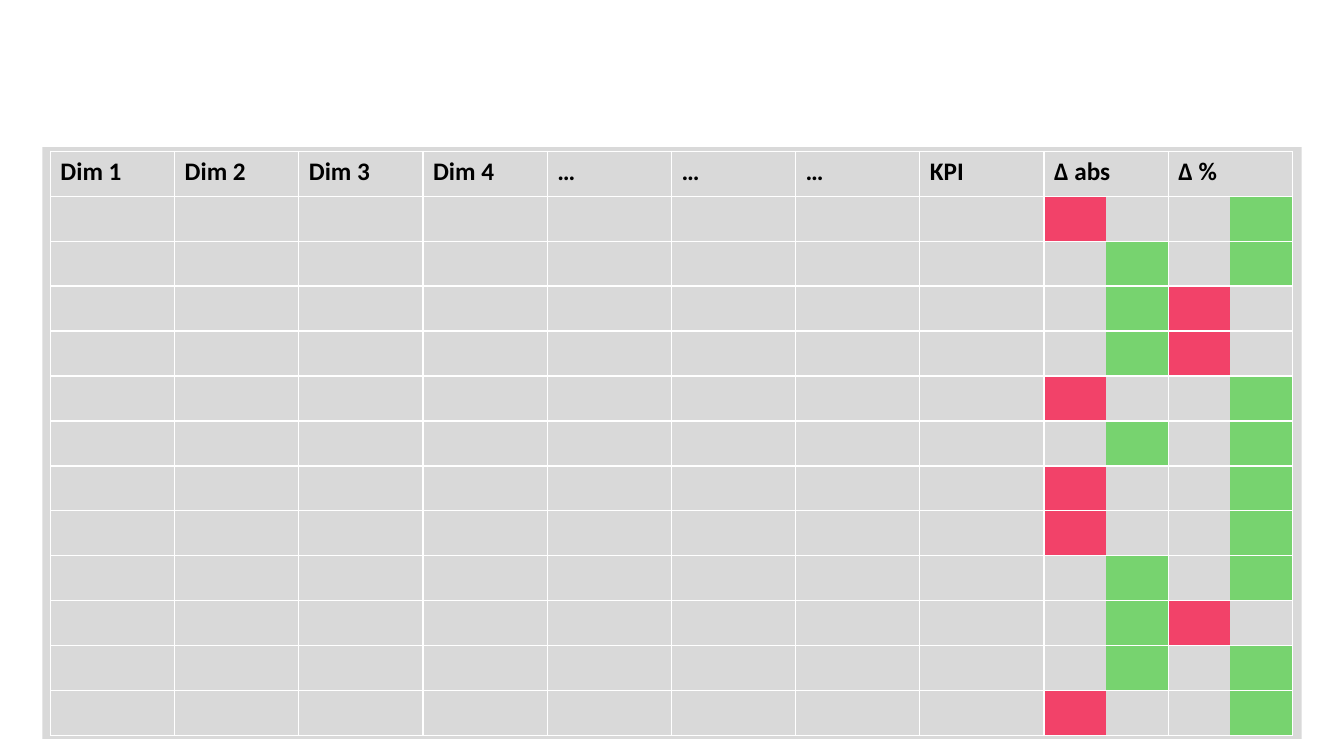
from lxml import etree
from pptx import Presentation
from pptx.dml.color import RGBColor
from pptx.enum.shapes import MSO_SHAPE
from pptx.oxml.ns import qn
from pptx.util import Inches, Pt

RECT = MSO_SHAPE.RECTANGLE
BLANK_LAYOUT = 6
FONT = "Calibri"
GREY, RED, GREEN = "D9D9D9", "F24269", "77D36F"
WHITE, BLACK = "FFFFFF", "000000"

HEADERS = ["Dim 1", "Dim 2", "Dim 3", "Dim 4", "…", "…", "…", "KPI", "Δ abs", "Δ %"]
DELTA_SIGNS = ["-+", "++", "+-", "+-", "-+", "++", "-+", "-+", "++", "+-", "++", "-+"]
SIGN_HALVES = {"-": (RED, GREY), "+": (GREY, GREEN)}


def color(value):
    return RGBColor.from_string(value)


def add_text(tf, text, size=18, bold=False, fill=BLACK):
    r = tf.paragraphs[0].add_run()
    r.text = text
    r.font.name = FONT
    r.font.size = Pt(size)
    r.font.bold = bold
    r.font.color.rgb = color(fill)


def set_borders(cell, line_color=WHITE, width=1):
    tc_pr = cell._tc.get_or_add_tcPr()
    for side in ("lnL", "lnR", "lnT", "lnB"):
        ln = etree.SubElement(tc_pr, qn(f"a:{side}"), w=str(Pt(width)))
        solid = etree.SubElement(ln, qn("a:solidFill"))
        etree.SubElement(solid, qn("a:srgbClr"), val=line_color)


def fill_halves(cell, halves):
    cell.fill.gradient()
    cell.fill.gradient_angle = 0
    for stop, half in zip(cell.fill.gradient_stops, halves):
        stop.position = 0.5
        stop.color.rgb = color(half)


def add_panel(s, box):
    sp = s.shapes.add_shape(RECT, *map(Inches, box))
    sp.shadow.inherit = False
    sp.fill.solid()
    sp.fill.fore_color.rgb = color(GREY)
    sp.line.fill.background()


def add_kpi_table(s, box):
    rows, cols = len(DELTA_SIGNS) + 1, len(HEADERS)
    left, top, width, height = map(Inches, box)
    table = s.shapes.add_table(rows, cols, left, top, width, height).table
    table.first_row = False
    table.horz_banding = False
    for col in table.columns:
        col.width = width // cols
    for row in table.rows:
        row.height = height // rows
    for cell in table.iter_cells():
        set_borders(cell)
        cell.fill.background()
    for i, header in enumerate(HEADERS):
        add_text(table.cell(0, i).text_frame, header, bold=True)
    for i, signs in enumerate(DELTA_SIGNS, start=1):
        for j, sign in enumerate(signs, start=cols - 2):
            fill_halves(table.cell(i, j), SIGN_HALVES[sign])


def main():
    prs = Presentation()
    prs.slide_width, prs.slide_height = Inches(13.33), Inches(7.5)
    s = prs.slides.add_slide(prs.slide_layouts[BLANK_LAYOUT])
    add_panel(s, (0.42, 1.46, 12.49, 5.87))
    add_kpi_table(s, (0.5, 1.5, 12.32, 5.8))
    prs.save("out.pptx")


if __name__ == "__main__":
    main()
